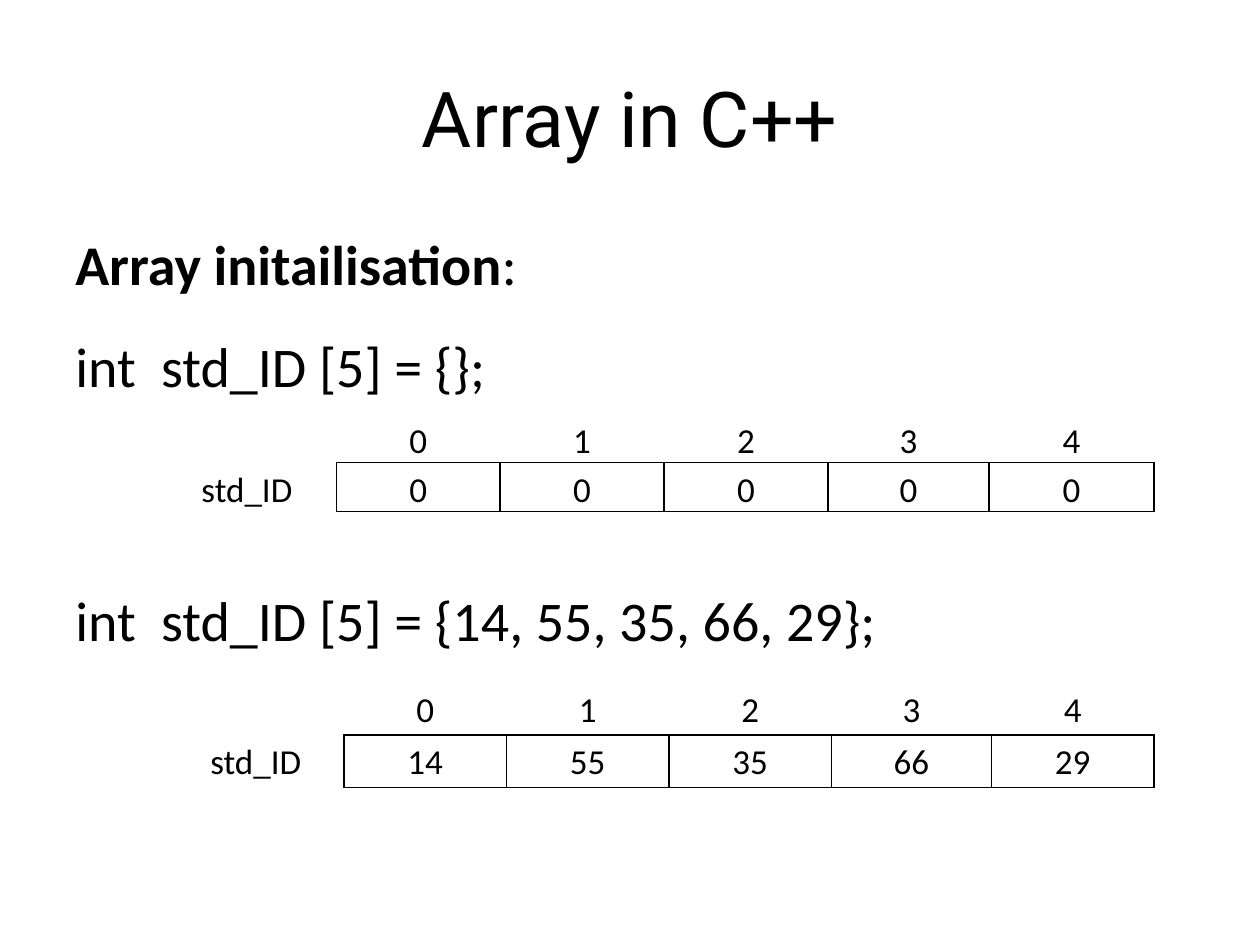
from dataclasses import dataclass

import pptx
import pptx.dml.color
import pptx.enum.text
import pptx.oxml
import pptx.oxml.ns
import pptx.util

Inches, Pt = pptx.util.Inches, pptx.util.Pt
ALIGN = pptx.enum.text.PP_ALIGN
ANCHOR = pptx.enum.text.MSO_ANCHOR

WIDTH, HEIGHT = 10, 7.5
MARGIN = 0.05 * WIDTH
BLACK = "000000"
BODY_FONT = "Calibri"


@dataclass
class ArrayTable:
    left: float
    top: float
    row_height: float
    columns: list[float]
    values: list[int]


@dataclass
class Line:
    text: str
    before: float
    bold: str = ""  # leading part set in bold


TABLES = [
    ArrayTable(1.25, 3.28, 0.39, [1.42, 1.3, 1.3, 1.3, 1.28, 1.31], [0] * 5),
    ArrayTable(1.33, 5.42, 0.415, [1.4, 1.29, 1.29, 1.29, 1.27, 1.29],
               [14, 55, 35, 66, 29]),
]
LINES = [
    Line(":", 0, bold="Array initailisation"),
    Line("int  std_ID [5] = {};", 20),
    Line("int  std_ID [5] = {14, 55, 35, 66, 29};", 107),
]


def color(value: str) -> pptx.dml.color.RGBColor:
    return pptx.dml.color.RGBColor.from_string(value)


def style(p, size: float, name: str = BODY_FONT) -> None:
    for r in p.runs:
        r.font.size, r.font.name = Pt(size), name
        r.font.color.rgb = color(BLACK)


def add_text_frame(s, top: float, height: float, anchor):
    sp = s.shapes.add_textbox(Inches(MARGIN), Inches(top),
                              Inches(WIDTH - 2 * MARGIN), Inches(height))
    tf = sp.text_frame
    tf.word_wrap = True
    tf.vertical_anchor = anchor
    return tf


def set_borders(cell, visible: str) -> None:
    """Draw the sides named in visible (L, R, T, B) and hide the others."""
    tc_pr = cell._tc.get_or_add_tcPr()
    for side in "LRTB":
        fill = (f'<a:solidFill><a:srgbClr val="{BLACK}"/></a:solidFill>'
                if side in visible else "<a:noFill/>")
        tc_pr.append(pptx.oxml.parse_xml(
            f'<a:ln{side} {pptx.oxml.ns.nsdecls("a")} w="{Pt(1)}">{fill}</a:ln{side}>'))


def add_array(s, array: ArrayTable) -> None:
    rows = [["", *range(len(array.values))], ["std_ID", *array.values]]
    table = s.shapes.add_table(
        len(rows), len(array.columns), Inches(array.left), Inches(array.top),
        Inches(sum(array.columns)), Inches(len(rows) * array.row_height)).table
    table.first_row = table.horz_banding = False
    for column, width in zip(table.columns, array.columns):
        column.width = Inches(width)
    for i, row in enumerate(rows):
        table.rows[i].height = Inches(array.row_height)
        for j, value in enumerate(row):
            cell = table.cell(i, j)
            cell.margin_left = cell.margin_right = Inches(0.07)
            cell.margin_top = cell.margin_bottom = 0
            # Only the value cells are boxed; their neighbours share the edges
            if j:
                set_borders(cell, "LRTB" if i else "B")
            else:
                set_borders(cell, "R" if i else "")
            cell.fill.background()
            p = cell.text_frame.paragraphs[0]
            p.text = str(value)
            p.alignment, p.line_spacing = ALIGN.CENTER, 1.15
            style(p, 20)


def main() -> None:
    prs = pptx.Presentation()
    prs.slide_width, prs.slide_height = Inches(WIDTH), Inches(HEIGHT)
    s = prs.slides.add_slide(prs.slide_layouts[6])

    # Title
    p = add_text_frame(s, 0.04 * HEIGHT, HEIGHT / 6, ANCHOR.MIDDLE).paragraphs[0]
    p.text = "Array in C++"
    p.alignment = ALIGN.CENTER
    style(p, 44, "Roboto")

    # Declarations, spaced to leave room for the arrays
    tf = add_text_frame(s, 1.77, 5.56, ANCHOR.TOP)
    for i, line in enumerate(LINES):
        p = tf.add_paragraph() if i else tf.paragraphs[0]
        p.space_before = Pt(line.before)
        if line.bold:
            r = p.add_run()
            r.text, r.font.bold = line.bold, True
        p.add_run().text = line.text
        style(p, 32)

    # Arrays with their indexes
    for array in TABLES:
        add_array(s, array)

    prs.save("out.pptx")


if __name__ == "__main__":
    main()
